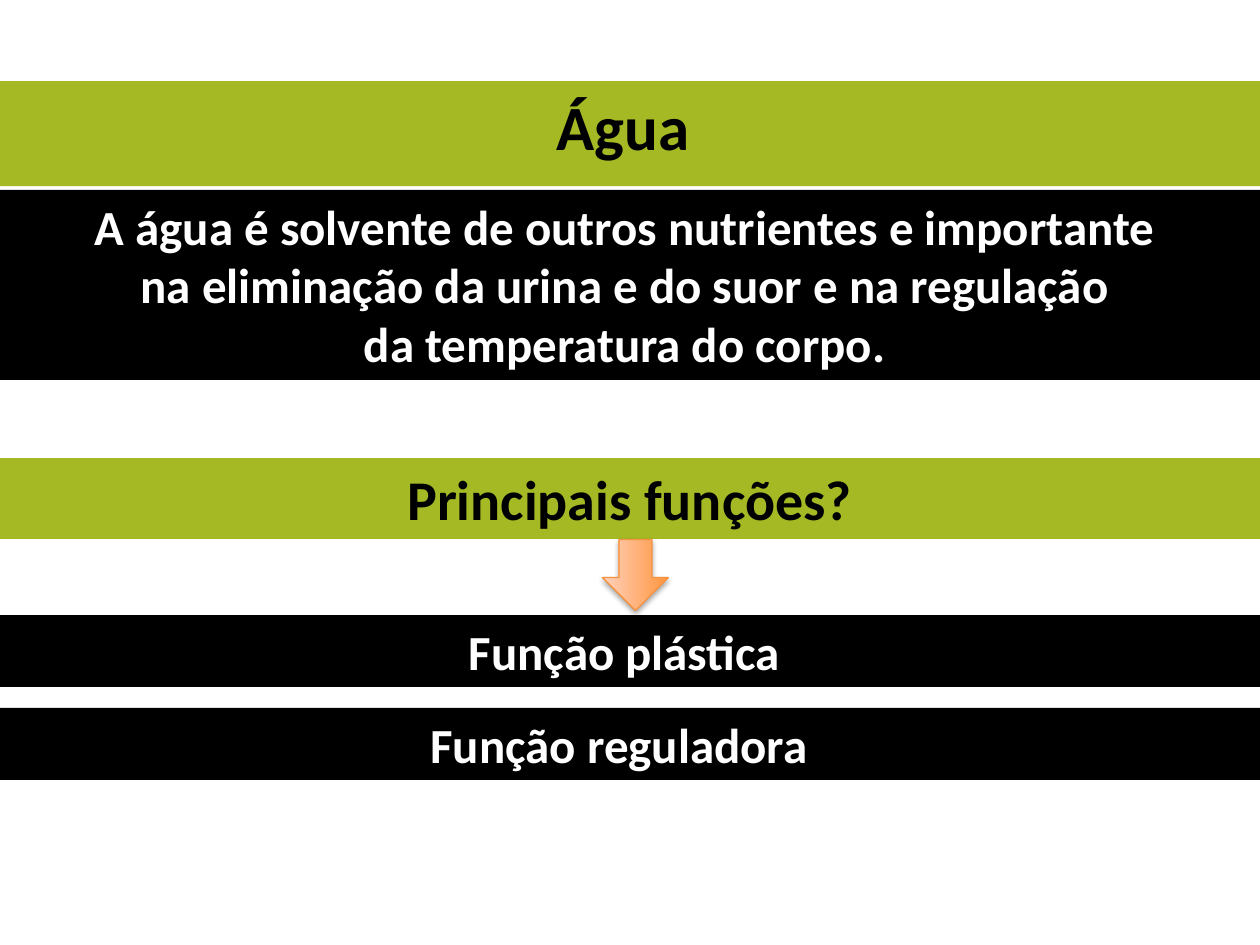
import lxml.etree
import pptx
import pptx.dml.color
import pptx.enum.shapes
import pptx.enum.text
import pptx.oxml
import pptx.oxml.ns
import pptx.util

RGBColor = pptx.dml.color.RGBColor
GREEN = RGBColor(0xA4, 0xB9, 0x24)
BLACK = RGBColor(0x00, 0x00, 0x00)
WHITE = RGBColor(0xFF, 0xFF, 0xFF)
ORANGE = RGBColor(0xFF, 0x95, 0x3E)
PEACH = RGBColor(0xFF, 0xD2, 0xBD)
ARROW_EDGE = RGBColor(0xF6, 0x92, 0x40)

WIDTH, HEIGHT = 1260, 945
FONT = "Calibri"
SHAPES = pptx.enum.shapes.MSO_SHAPE


def px(length):
    return pptx.util.Inches(length / 126)


class BandPage:
    """Draws full-width text bands and arrows on one slide."""

    def __init__(self, page):
        self.page = page

    def title(self, text, top, height, size, fill, color, inset):
        box = self.page.shapes.title
        box.left, box.top, box.width, box.height = px(0), px(top), px(WIDTH), px(height)
        self.style(box, text, size, fill, color, inset)

    def band(self, text, top, height, size, fill, color, inset=0):
        box = self.page.shapes.add_shape(SHAPES.RECTANGLE, px(0), px(top), px(WIDTH), px(height))
        box.shadow.inherit = False
        box.line.fill.background()
        self.style(box, text, size, fill, color, inset)

    def style(self, box, text, size, fill, color, inset):
        box.fill.solid()
        box.fill.fore_color.rgb = fill
        frame = box.text_frame
        frame.text = text
        frame.word_wrap = True
        frame.auto_size = pptx.enum.text.MSO_AUTO_SIZE.SHAPE_TO_FIT_TEXT
        frame.vertical_anchor = pptx.enum.text.MSO_ANCHOR.TOP
        frame.margin_right = pptx.util.Inches(0.1) + px(inset)
        para = frame.paragraphs[0]
        para.alignment = pptx.enum.text.PP_ALIGN.CENTER
        for span in para.runs:
            span.font.name = FONT
            span.font.size = pptx.util.Pt(size)
            span.font.bold = True
            span.font.color.rgb = color

    def arrow(self, left, top, width, height):
        arrow = self.page.shapes.add_shape(
            SHAPES.LEFT_ARROW, px(left), px(top), px(width), px(height))
        arrow.rotation = 270
        arrow.fill.gradient()
        arrow.fill.gradient_angle = 90
        for stop, position, color in zip(arrow.fill.gradient_stops, (0, 1), (ORANGE, PEACH)):
            stop.position = position
            stop.color.rgb = color
        arrow.line.color.rgb = ARROW_EDGE
        arrow.line.width = pptx.util.Pt(0.75)
        self.drop_shadow(arrow)

    def drop_shadow(self, shape):
        shape.shadow.inherit = False
        qn = pptx.oxml.ns.qn
        effects = shape._element.spPr.find(qn("a:effectLst"))
        shadow = lxml.etree.SubElement(
            effects, qn("a:outerShdw"), blurRad="40000", dist="23000",
            dir="5400000", rotWithShape="0")
        color = lxml.etree.SubElement(shadow, qn("a:srgbClr"), val="000000")
        lxml.etree.SubElement(color, qn("a:alpha"), val="35000")


def main():
    deck = pptx.Presentation()
    deck.slide_width, deck.slide_height = px(WIDTH), px(HEIGHT)
    water = BandPage(deck.slides.add_slide(deck.slide_layouts[5]))
    water.title("Água", 81, 89, 36, GREEN, BLACK, 14)
    water.band(
        "A água é solvente de outros nutrientes e importante\v"
        "na eliminação da urina e do suor e na regulação\v"
        "da temperatura do corpo.", 190, 190, 28, BLACK, WHITE, 11)
    water.band("Principais funções?", 458, 81, 32, GREEN, BLACK)
    water.band("Função plástica", 615, 72, 28, BLACK, WHITE, 11)
    water.arrow(600, 542, 71, 66)
    water.band("Função reguladora", 708, 72, 28, BLACK, WHITE, 22)
    deck.save("out.pptx")


if __name__ == "__main__":
    main()
